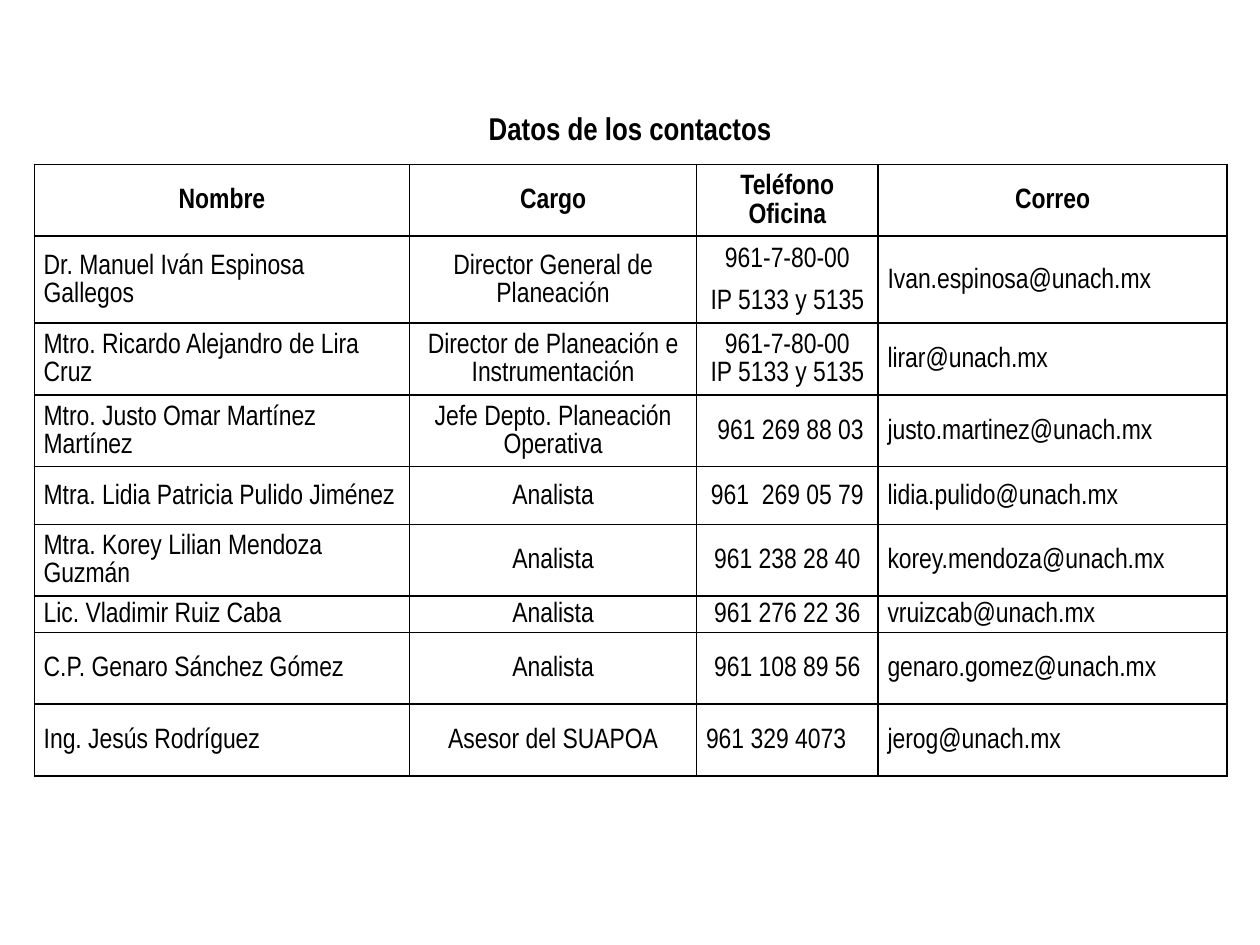
from lxml import etree
from pptx import Presentation
from pptx.dml.color import RGBColor
from pptx.enum.text import MSO_ANCHOR, PP_ALIGN
from pptx.oxml.ns import qn
from pptx.util import Pt

LEFT, MID = PP_ALIGN.LEFT, PP_ALIGN.CENTER
CENTER = MSO_ANCHOR.MIDDLE
BLACK = RGBColor(0, 0, 0)
TITLE_ONLY = 5

COLS = [214.5, 164, 103.7, 199.4]
ALIGNS = [LEFT, MID, MID, LEFT]
HEIGHTS = [41, 49.7, 41, 41, 33, 41, 20.7, 41, 41]
SPACED = {1, 8}  # rows with space after each paragraph
ROWS = [
    ("Nombre", "Cargo", "Teléfono Oficina", "Correo"),
    ("Dr. Manuel Iván Espinosa Gallegos", "Director General de Planeación",
     "961-7-80-00\nIP 5133 y 5135", "Ivan.espinosa@unach.mx"),
    ("Mtro. Ricardo Alejandro de Lira Cruz",
     "Director de Planeación e Instrumentación",
     "961-7-80-00\nIP 5133 y 5135", "lirar@unach.mx"),
    ("Mtro. Justo Omar Martínez Martínez", "Jefe Depto. Planeación Operativa",
     " 961 269 88 03", "justo.martinez@unach.mx"),
    ("Mtra. Lidia Patricia Pulido Jiménez", "Analista",
     "961  269 05 79", "lidia.pulido@unach.mx"),
    ("Mtra. Korey Lilian Mendoza Guzmán", "Analista",
     "961 238 28 40", "korey.mendoza@unach.mx"),
    ("Lic. Vladimir Ruiz Caba", "Analista",
     "961 276 22 36", "vruizcab@unach.mx"),
    ("C.P. Genaro Sánchez Gómez", "Analista",
     "961 108 89 56", "genaro.gomez@unach.mx"),
    ("Ing. Jesús Rodríguez", "Asesor del SUAPOA",
     "961 329 4073", "jerog@unach.mx"),
]


class Deck:
    face = "Arial Narrow"
    ink = BLACK
    size = 16

    def __init__(self, slide):
        self.slide = slide

    def text(self, frame, text, align, bold=False, size=None, lead=1, after=0):
        """Fill a text frame, one paragraph for each line of text."""
        for i, line in enumerate(text.split("\n")):
            para = frame.add_paragraph() if i else frame.paragraphs[0]
            para.alignment = align
            para.line_spacing = lead
            para.space_before = Pt(0)
            para.space_after = Pt(after)
            run = para.add_run()
            run.text = line
            font = run.font
            font.name, font.size, font.bold = self.face, Pt(size or self.size), bold
            font.color.rgb = self.ink

    def title(self, text, x, y, w, h):
        shape = self.slide.shapes.title
        shape.left, shape.top, shape.width, shape.height = map(Pt, (x, y, w, h))
        shape.text_frame.vertical_anchor = CENTER
        self.text(shape.text_frame, text, MID, bold=True, size=18)

    def border(self, cell, width=1):
        props = cell._tc.get_or_add_tcPr()
        for i, side in enumerate(("a:lnL", "a:lnR", "a:lnT", "a:lnB")):
            line = etree.Element(qn(side), w=str(Pt(width)))
            fill = etree.SubElement(line, qn("a:solidFill"))
            etree.SubElement(fill, qn("a:srgbClr"), val=str(self.ink))
            props.insert(i, line)

    def cell(self, cell, text, align, bold, after):
        cell.margin_left = cell.margin_right = Pt(5.4)
        cell.margin_top = Pt(0.5)
        cell.margin_bottom = Pt(0)
        cell.vertical_anchor = CENTER
        cell.fill.background()
        self.border(cell)
        self.text(cell.text_frame, text, align, bold, lead=1.07, after=after)

    def table(self, rows, x, y):
        frame = self.slide.shapes.add_table(
            len(rows), len(COLS), Pt(x), Pt(y), Pt(sum(COLS)), Pt(sum(HEIGHTS)))
        grid = frame.table
        grid.first_row = grid.horz_banding = False
        for col, width in zip(grid.columns, COLS):
            col.width = Pt(width)
        for r, row in enumerate(rows):
            grid.rows[r].height = Pt(HEIGHTS[r])
            for c, text in enumerate(row):
                align = MID if r == 0 else ALIGNS[c]
                if (r, c) == (len(rows) - 1, 2):
                    align = LEFT
                self.cell(grid.cell(r, c), text, align, r == 0,
                          8 if r in SPACED else 0)


def main():
    prs = Presentation()
    prs.slide_width, prs.slide_height = Pt(720), Pt(540)
    deck = Deck(prs.slides.add_slide(prs.slide_layouts[TITLE_ONLY]))
    deck.table(ROWS, 19.6, 94)
    deck.title("Datos de los contactos", 189.4, 58.5, 341.3, 29)
    prs.save("out.pptx")


if __name__ == "__main__":
    main()
